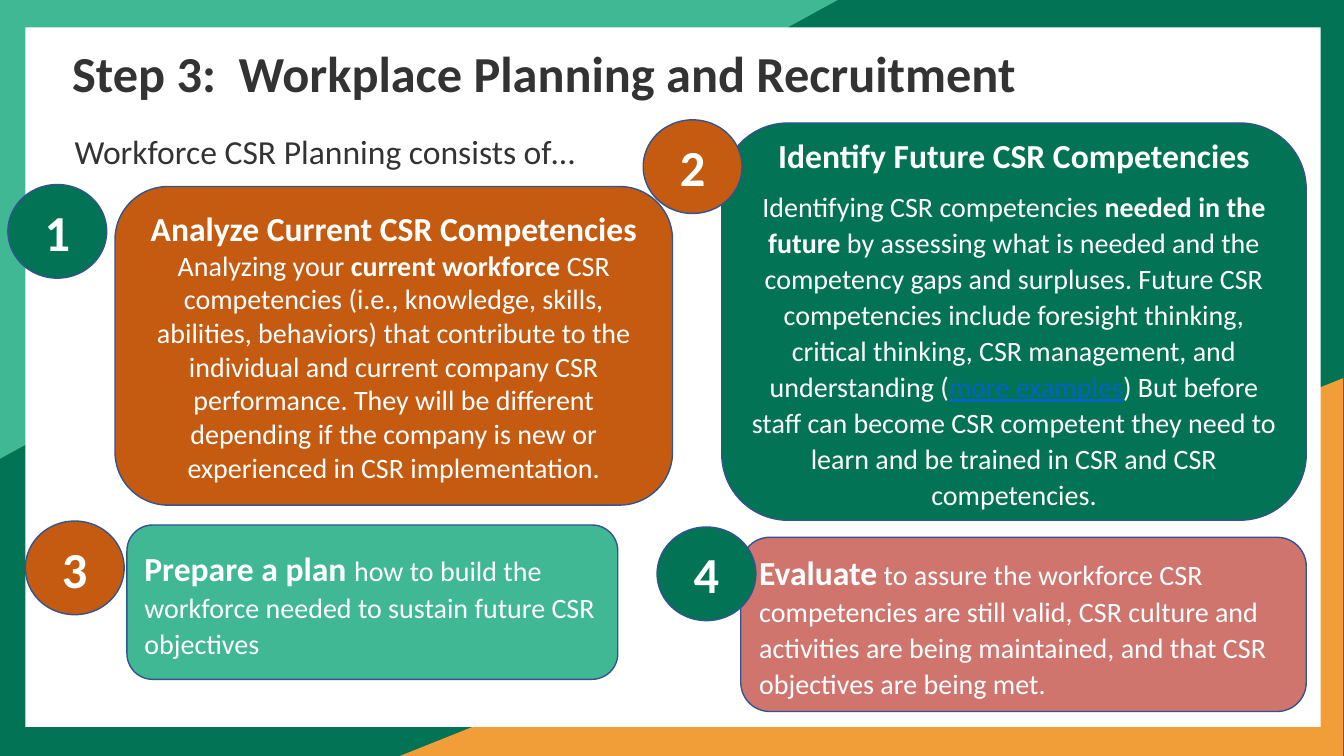
"""Build the Step 3 slide on workplace planning and recruitment."""
from pptx import Presentation
from pptx.dml.color import RGBColor
from pptx.enum.shapes import MSO_SHAPE
from pptx.enum.text import MSO_ANCHOR, PP_ALIGN
from pptx.util import Cm, Pt

RECT, ROUND = MSO_SHAPE.RECTANGLE, MSO_SHAPE.ROUNDED_RECTANGLE
WEDGE, DISC = MSO_SHAPE.ISOSCELES_TRIANGLE, MSO_SHAPE.FLOWCHART_CONNECTOR
LEFT, CENTER = PP_ALIGN.LEFT, PP_ALIGN.CENTER
TOP, MIDDLE = MSO_ANCHOR.TOP, MSO_ANCHOR.MIDDLE

WHITE = RGBColor(0xFF, 0xFF, 0xFF)
DARK = RGBColor(0x33, 0x33, 0x33)
GREEN = RGBColor(0x02, 0x73, 0x54)
MINT = RGBColor(0x40, 0xB8, 0x94)
AMBER = RGBColor(0xF2, 0x9E, 0x38)
RUST = RGBColor(0xC5, 0x5A, 0x11)
ROSE = RGBColor(0xD0, 0x75, 0x6E)
NAVY = RGBColor(0x32, 0x54, 0x91)
BLUE = RGBColor(0x05, 0x63, 0xC1)

FONT = "Calibri"
WIDE, HIGH = 33.87, 19.05
DISC_W, DISC_H = 2.49, 2.36

STYLES = {
    "title": (36, True, DARK),
    "lead": (24, False, DARK),
    "head": (24, True, WHITE),
    "body": (20, False, WHITE),
    "bold": (20, True, WHITE),
    "link": (20, False, BLUE),
    "badge": (36, True, WHITE),
}

BACK = [
    (RECT, (0, 0, WIDE, HIGH), GREEN, 0),
    (WEDGE, (10.08, 9.53, 23.77, 9.52), AMBER, 0),
    (WEDGE, (0, 0, 21.11, 11.56), MINT, 180),
    (RECT, (0.64, 0.69, 32.64, 17.63), WHITE, 0),
]

TEXTS = [
    ((1.57, 1.12, 29.16, 2.34), 0.9, 0,
     [[("title", "Step 3:  Workplace Planning and Recruitment")]]),
    ((1.63, 3.1, 29.11, 12.04), 1.07, 8.7,
     [[("lead", "Workforce CSR Planning consists of…")]]),
]

CARDS = [
    ((2.9, 4.7, 14.05, 8.03), RUST, CENTER, 1, 0, [
        [("head", "Analyze Current CSR Competencies")],
        [("body", "Analyzing your "),
         ("bold", "current workforce "),
         ("body", "CSR competencies (i.e., knowledge, skills, abilities, "
          "behaviors) that contribute to the individual and current company "
          "CSR performance. They will be different depending if the company "
          "is new or experienced in CSR implementation.")],
    ]),
    ((18.19, 3.1, 14.73, 10.01), GREEN, CENTER, 1.07, 8.7, [
        [("head", "Identify Future CSR Competencies")],
        [("body", "Identifying CSR competencies "),
         ("bold", "needed in the future "),
         ("body", "by assessing what is needed and the competency gaps and "
          "surpluses. Future CSR competencies include foresight thinking, "
          "critical thinking, CSR management, and understanding ("),
         ("link", "more examples"),
         ("body", ") But before staff can become CSR competent they need to "
          "learn and be trained in CSR and CSR competencies.")],
    ]),
    ((3.2, 13.23, 12.37, 3.89), MINT, LEFT, 1.07, 8.7, [
        [("head", "Prepare a plan "),
         ("body", "how to build the workforce needed to sustain future CSR "
          "objectives")],
    ]),
    ((18.67, 13.54, 14.25, 4.39), ROSE, LEFT, 1.07, 8.7, [
        [("head", "Evaluate"),
         ("body", " to assure the workforce CSR competencies are still valid, "
          "CSR culture and activities are being maintained, and that CSR "
          "objectives are being met.")],
    ]),
]

BADGES = [
    ((0.2, 4.65), GREEN),
    ((16.21, 3.02), RUST),
    ((0.64, 13.13), RUST),
    ((16.56, 13.28), GREEN),
]


def add_form(slide, kind, box, fill, line=None):
    form = slide.shapes.add_shape(kind, *map(Cm, box))
    form.shadow.inherit = False
    form.fill.solid()
    form.fill.fore_color.rgb = fill
    if line is None:
        form.line.fill.background()
    else:
        form.line.color.rgb = line
        form.line.width = Pt(1)
    return form


def write(shape, paras, align, anchor, lead=1, after=0):
    frame = shape.text_frame
    frame.word_wrap = True
    frame.vertical_anchor = anchor
    for i, runs in enumerate(paras):
        para = frame.add_paragraph() if i else frame.paragraphs[0]
        para.alignment = align
        para.line_spacing = float(lead)
        para.space_after = Pt(after)
        for style, text in runs:
            size, bold, color = STYLES[style]
            run = para.add_run()
            run.text = text
            run.font.name = FONT
            run.font.size = Pt(size)
            run.font.bold = bold
            run.font.underline = style == "link"
            run.font.color.rgb = color


def main():
    deck = Presentation()
    deck.slide_width, deck.slide_height = Cm(WIDE), Cm(HIGH)
    slide = deck.slides.add_slide(deck.slide_layouts[6])

    for kind, box, fill, turn in BACK:
        form = add_form(slide, kind, box, fill)
        form.rotation = turn
        if kind == WEDGE:
            form.adjustments[0] = 1

    for box, lead, after, paras in TEXTS:
        label = slide.shapes.add_textbox(*map(Cm, box))
        write(label, paras, LEFT, TOP, lead, after)

    for box, fill, align, lead, after, paras in CARDS:
        card = add_form(slide, ROUND, box, fill, NAVY)
        write(card, paras, align, MIDDLE, lead, after)

    for num, (spot, fill) in enumerate(BADGES, 1):
        badge = add_form(slide, DISC, (*spot, DISC_W, DISC_H), fill, NAVY)
        write(badge, [[("badge", str(num))]], CENTER, MIDDLE)

    deck.save("out.pptx")


if __name__ == "__main__":
    main()
